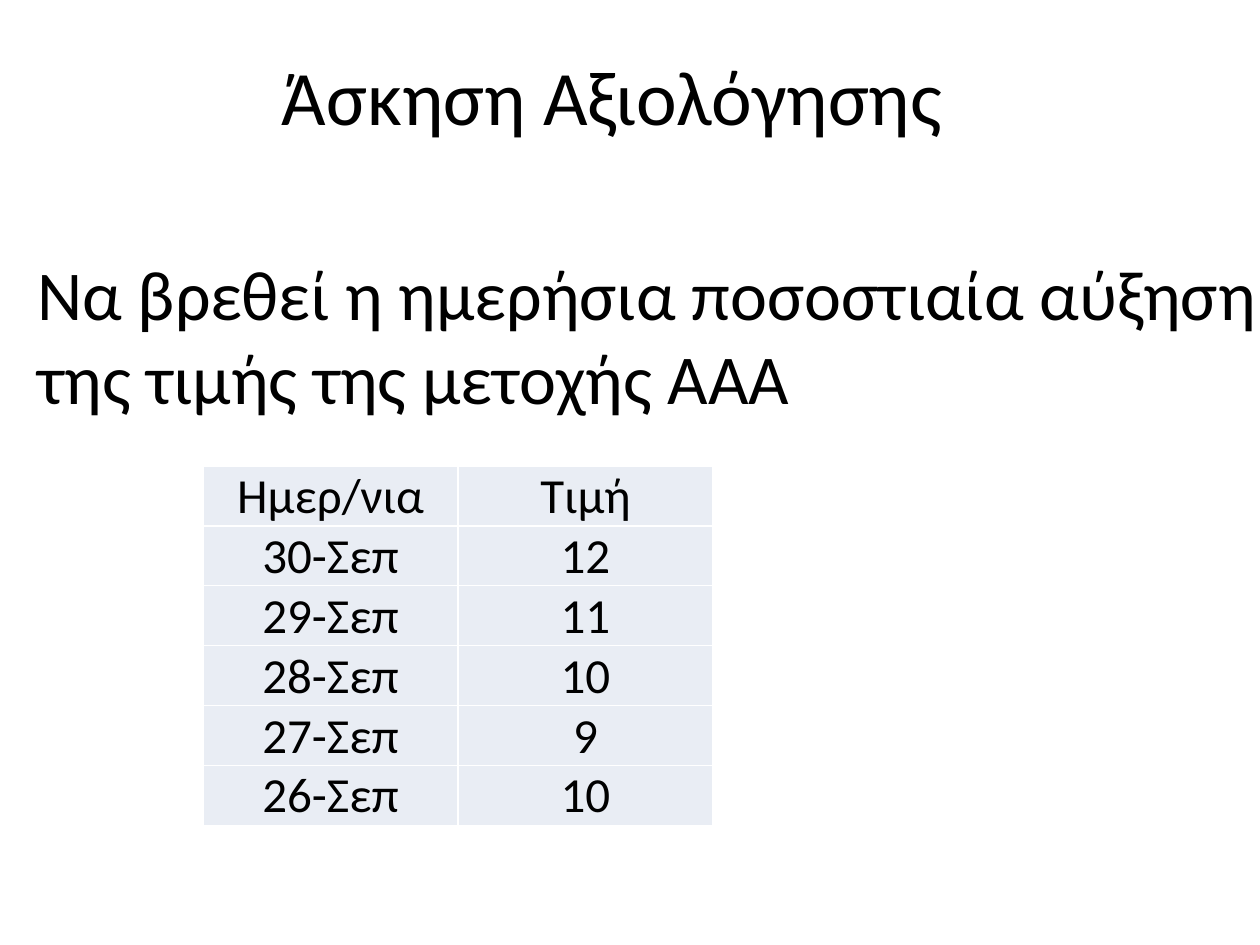
from lxml import etree
from pptx import Presentation
from pptx import util as u
from pptx.dml.color import RGBColor
from pptx.enum import text
from pptx.oxml import ns

BLACK = RGBColor(0x00, 0x00, 0x00)
WHITE = RGBColor(0xFF, 0xFF, 0xFF)
PALE_BLUE = RGBColor(0xE9, 0xED, 0xF4)
FONT = "Calibri"
PX_PER_INCH = 126

PRICES = [
    ("Ημερ/νια", "Τιμή"),
    ("30-Σεπ", "12"),
    ("29-Σεπ", "11"),
    ("28-Σεπ", "10"),
    ("27-Σεπ", "9"),
    ("26-Σεπ", "10"),
]


def px(length):
    return u.Emu(round(length * u.Inches(1) / PX_PER_INCH))


def write(frame, content, size, align=text.PP_ALIGN.LEFT, color=BLACK, font=FONT):
    for index, line in enumerate(content.split("\n")):
        para = frame.paragraphs[0] if index == 0 else frame.add_paragraph()
        para.alignment = align
        span = para.add_run()
        span.text = line
        span.font.size = u.Pt(size)
        span.font.name = font
        span.font.color.rgb = color


class SlideBuilder:
    """Holds the shared style and the slide being filled."""

    def __init__(self, slide, border=WHITE, fill=PALE_BLUE):
        self.slide = slide
        self.border = border
        self.fill = fill

    def text_box(self, left, top, width, height, content, wrap=True,
                 anchor=text.MSO_ANCHOR.TOP, autosize=text.MSO_AUTO_SIZE.NONE, **style):
        box = self.slide.shapes.add_textbox(px(left), px(top), px(width), px(height))
        frame = box.text_frame
        frame.word_wrap = wrap
        frame.auto_size = autosize
        frame.vertical_anchor = anchor
        write(frame, content, **style)

    def table(self, left, top, width, height, rows, **style):
        frame = self.slide.shapes.add_table(
            len(rows), len(rows[0]), px(left), px(top), px(width), px(height))
        for row, values in zip(frame.table.rows, rows):
            for cell, value in zip(row.cells, values):
                self.cell(cell, value, **style)

    def cell(self, cell, value, **style):
        cell.margin_left = cell.margin_right = cell.margin_top = px(1)
        cell.margin_bottom = 0
        cell.vertical_anchor = text.MSO_ANCHOR.BOTTOM
        write(cell.text_frame, value, **style)
        self.cell_borders(cell)
        cell.fill.solid()
        cell.fill.fore_color.rgb = self.fill

    def cell_borders(self, cell):
        properties = cell._tc.get_or_add_tcPr()
        for side in ("lnL", "lnR", "lnT", "lnB"):
            line = etree.SubElement(properties, ns.qn(f"a:{side}"), w=str(u.Pt(1)))
            solid = etree.SubElement(line, ns.qn("a:solidFill"))
            etree.SubElement(solid, ns.qn("a:srgbClr"), val=str(self.border))


def main():
    deck = Presentation()
    deck.slide_width, deck.slide_height = px(1260), px(945)
    page = SlideBuilder(deck.slides.add_slide(deck.slide_layouts[6]))
    page.text_box(54, 16, 1134, 158, "Άσκηση Αξιολόγησης ", size=44,
                  anchor=text.MSO_ANCHOR.MIDDLE, align=text.PP_ALIGN.CENTER)
    page.text_box(25, 244, 1290, 183,
                  "Να βρεθεί η ημερήσια ποσοστιαία αύξηση\nτης τιμής της μετοχής ΑΑΑ",
                  size=40, wrap=False, autosize=text.MSO_AUTO_SIZE.SHAPE_TO_FIT_TEXT)
    page.table(203, 466, 510, 358, PRICES, size=28, align=text.PP_ALIGN.CENTER)
    deck.save("out.pptx")


if __name__ == "__main__":
    main()
